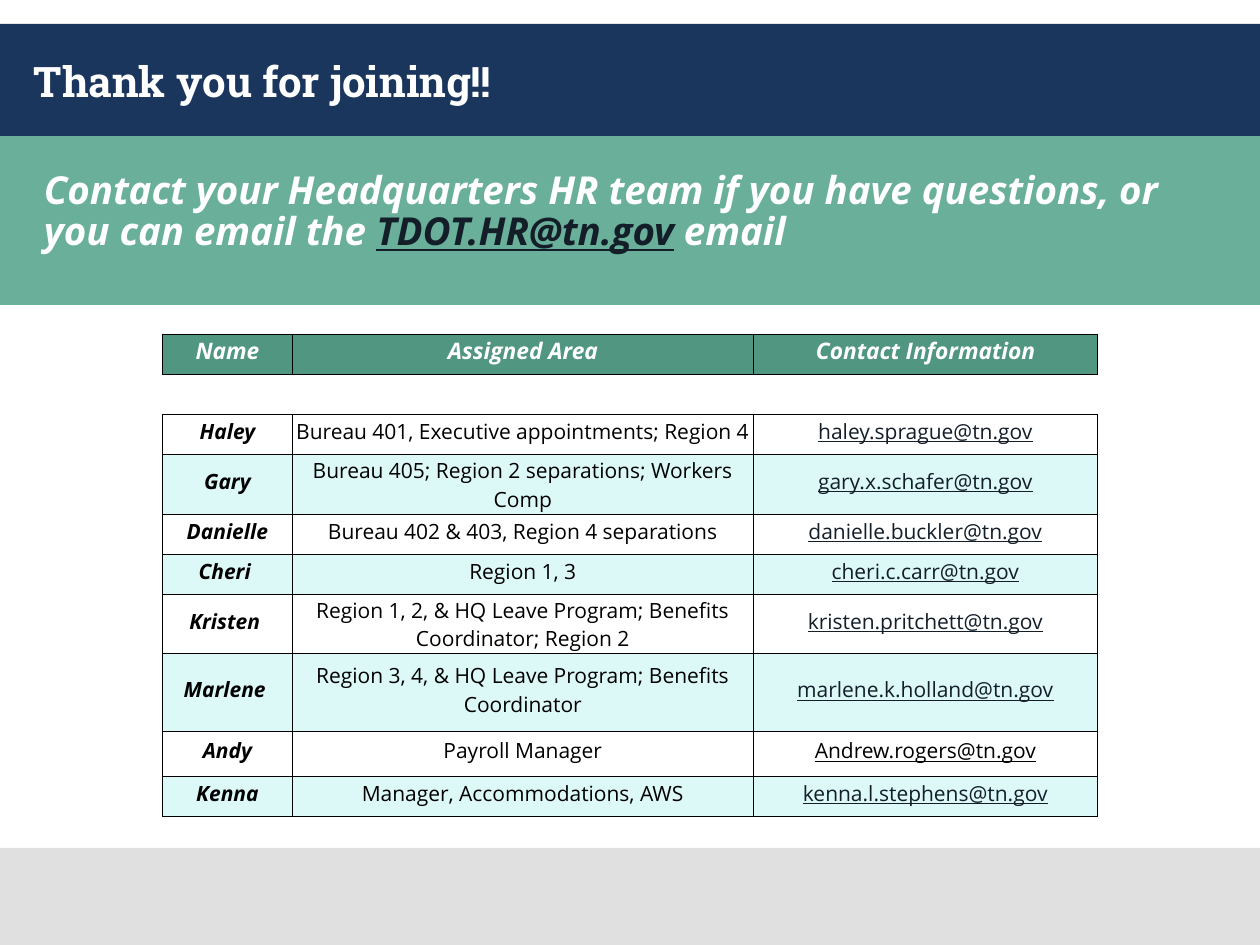
from dataclasses import dataclass

from lxml.etree import SubElement
from pptx import Presentation
from pptx.dml.color import RGBColor
from pptx.enum.shapes import MSO_SHAPE
from pptx.enum.text import MSO_ANCHOR, PP_ALIGN
from pptx.oxml import parse_xml
from pptx.oxml.ns import nsdecls, qn
from pptx.util import Inches, Pt


@dataclass(frozen=True)
class Theme:
    navy: str = "1B365D"
    green: str = "69AF99"
    header: str = "509680"
    stripe: str = "DCF8F7"
    gray: str = "E0E0E0"
    white: str = "FFFFFF"
    ink: str = "131E29"
    black: str = "000000"
    heading_font: str = "Roboto Slab"
    body_font: str = "Open Sans"
    title: int = 24
    message: int = 22
    header_size: int = 13
    cell_size: int = 12


THEME = Theme()
COLUMNS, ROWS = 100, 75  # slide grid
WIDTH, HEIGHT = Inches(10), Inches(7.5)

TITLE = dict(size=THEME.title, name=THEME.heading_font, color=THEME.white, bold=True)
MESSAGE = dict(size=THEME.message, name=THEME.body_font, color=THEME.white,
               bold=True, italic=True)
ADDRESS = MESSAGE | dict(color=THEME.ink, underline=True)
HEADER = MESSAGE | dict(size=THEME.header_size)
NAME = HEADER | dict(size=THEME.cell_size, color=THEME.black)
AREA = NAME | dict(bold=False, italic=False)
EMAIL = AREA | dict(color=THEME.ink, underline=True)
DARK_EMAIL = EMAIL | dict(color=THEME.black)

HEADINGS = ["Name", "Assigned Area", "Contact Information"]
CONTACTS = [
    ("Haley", "Bureau 401, Executive appointments; Region 4 ", "haley.sprague@tn.gov"),
    ("Gary", "Bureau 405; Region 2 separations; Workers Comp", "gary.x.schafer@tn.gov"),
    ("Danielle", "Bureau 402 & 403, Region 4 separations", "danielle.buckler@tn.gov"),
    ("Cheri ", "Region 1, 3", "cheri.c.carr@tn.gov"),
    ("Kristen ", "Region 1, 2, & HQ Leave Program; Benefits Coordinator; Region 2",
     "kristen.pritchett@tn.gov"),
    ("Marlene ", "Region 3, 4, & HQ Leave Program; Benefits Coordinator",
     "marlene.k.holland@tn.gov"),
    ("Andy", "Payroll Manager", "Andrew.rogers@tn.gov"),
    ("Kenna", "Manager, Accommodations, AWS", "kenna.l.stephens@tn.gov"),
]
COLUMN_SPANS = [10.3, 36.6, 27.3]
ROW_SPAN = 3.2
TALL_ROWS = {"Marlene ": 6.2, "Andy": 3.5}


class SlideBuilder:
    def __init__(self, slide, theme):
        self.slide, self.theme = slide, theme

    def x(self, columns):
        return round(WIDTH * columns / COLUMNS)

    def y(self, rows):
        return round(HEIGHT * rows / ROWS)

    def box(self, left, top, width, height):
        return self.x(left), self.y(top), self.x(width), self.y(height)

    def band(self, top, height, color):
        band = self.slide.shapes.add_shape(
            MSO_SHAPE.RECTANGLE, *self.box(0, top, COLUMNS, height))
        band.shadow.inherit = False
        band.fill.solid()
        band.fill.fore_color.rgb = RGBColor.from_string(color)
        band.line.fill.background()

    def add_runs(self, paragraph, runs):
        for words, style in runs:
            run = paragraph.add_run()
            run.text = words
            for key, value in style.items():
                if key == "color":
                    run.font.color.rgb = RGBColor.from_string(value)
                else:
                    setattr(run.font, key, Pt(value) if key == "size" else value)

    def text(self, place, runs, anchor=MSO_ANCHOR.TOP, spacing=1.0):
        frame = self.slide.shapes.add_textbox(*self.box(*place)).text_frame
        frame.word_wrap = True
        frame.vertical_anchor = anchor
        paragraph = frame.paragraphs[0]
        paragraph.line_spacing = spacing
        self.add_runs(paragraph, runs)

    def borders(self, cell, sides):
        properties = cell._tc.get_or_add_tcPr()
        for index, side in enumerate("LRTB"):
            paint = (f'<a:solidFill><a:srgbClr val="{self.theme.black}"/></a:solidFill>'
                     if side in sides else "<a:noFill/>")
            properties.insert(index, parse_xml(
                f'<a:ln{side} {nsdecls("a")} w="{Pt(0.5)}">{paint}</a:ln{side}>'))

    def cell(self, cell, words, style, fill, anchor=MSO_ANCHOR.MIDDLE):
        layout = dict(margin_left=Inches(0.01), margin_right=Inches(0.01),
                      margin_top=Inches(0.01), margin_bottom=Inches(0.06),
                      vertical_anchor=anchor)
        for key, value in layout.items():
            setattr(cell, key, value)
        if fill:
            cell.fill.solid()
            cell.fill.fore_color.rgb = RGBColor.from_string(fill)
        else:
            cell.fill.background()
        paragraph = cell.text_frame.paragraphs[0]
        paragraph.alignment = PP_ALIGN.CENTER
        if words:
            self.add_runs(paragraph, [(words, style)])
        else:
            # Keeps the spacer row as low as the text rows
            SubElement(paragraph._p, qn("a:endParaRPr"), sz=str(style["size"] * 100))
        self.borders(cell, "LRTB" if words else "TB")

    def table(self, left, top, column_spans, row_spans):
        table = self.slide.shapes.add_table(
            len(row_spans), len(column_spans),
            *self.box(left, top, sum(column_spans), sum(row_spans))).table
        table.first_row = table.horz_banding = False
        for column, span in zip(table.columns, column_spans):
            column.width = self.x(span)
        for row, span in zip(table.rows, row_spans):
            row.height = self.y(span)
        return table


def main():
    deck = Presentation()
    deck.slide_width, deck.slide_height = WIDTH, HEIGHT
    page = SlideBuilder(deck.slides.add_slide(deck.slide_layouts[6]), THEME)

    # Background bands
    page.band(1.9, 8.9, THEME.navy)
    page.band(67.3, 7.7, THEME.gray)
    page.band(10.8, 13.4, THEME.green)

    # Title and message
    page.text((1.7, 1.9, 96.7, 9), [("Thank you for joining!!", TITLE)], MSO_ANCHOR.MIDDLE)
    page.text((2.5, 13.1, 95.8, 10.6), [
        ("Contact your Headquarters HR team if you have questions, or you can email the ",
         MESSAGE),
        ("TDOT.HR@tn.gov", ADDRESS),
        (" email", MESSAGE),
    ], spacing=0.9)

    # Contact table: header, spacer, striped contacts
    row_spans = [ROW_SPAN] * 2 + [TALL_ROWS.get(name, ROW_SPAN) for name, *_ in CONTACTS]
    table = page.table(12.9, 26.5, COLUMN_SPANS, row_spans)
    for column, heading in enumerate(HEADINGS):
        page.cell(table.cell(0, column), heading, HEADER, THEME.header, MSO_ANCHOR.BOTTOM)
        page.cell(table.cell(1, column), "", AREA, None)
    for index, contact in enumerate(CONTACTS):
        fill = THEME.stripe if index % 2 else None
        email = DARK_EMAIL if contact[0] == "Andy" else EMAIL
        for column, (words, style) in enumerate(zip(contact, (NAME, AREA, email))):
            page.cell(table.cell(index + 2, column), words, style, fill)

    deck.save("out.pptx")


if __name__ == "__main__":
    main()
